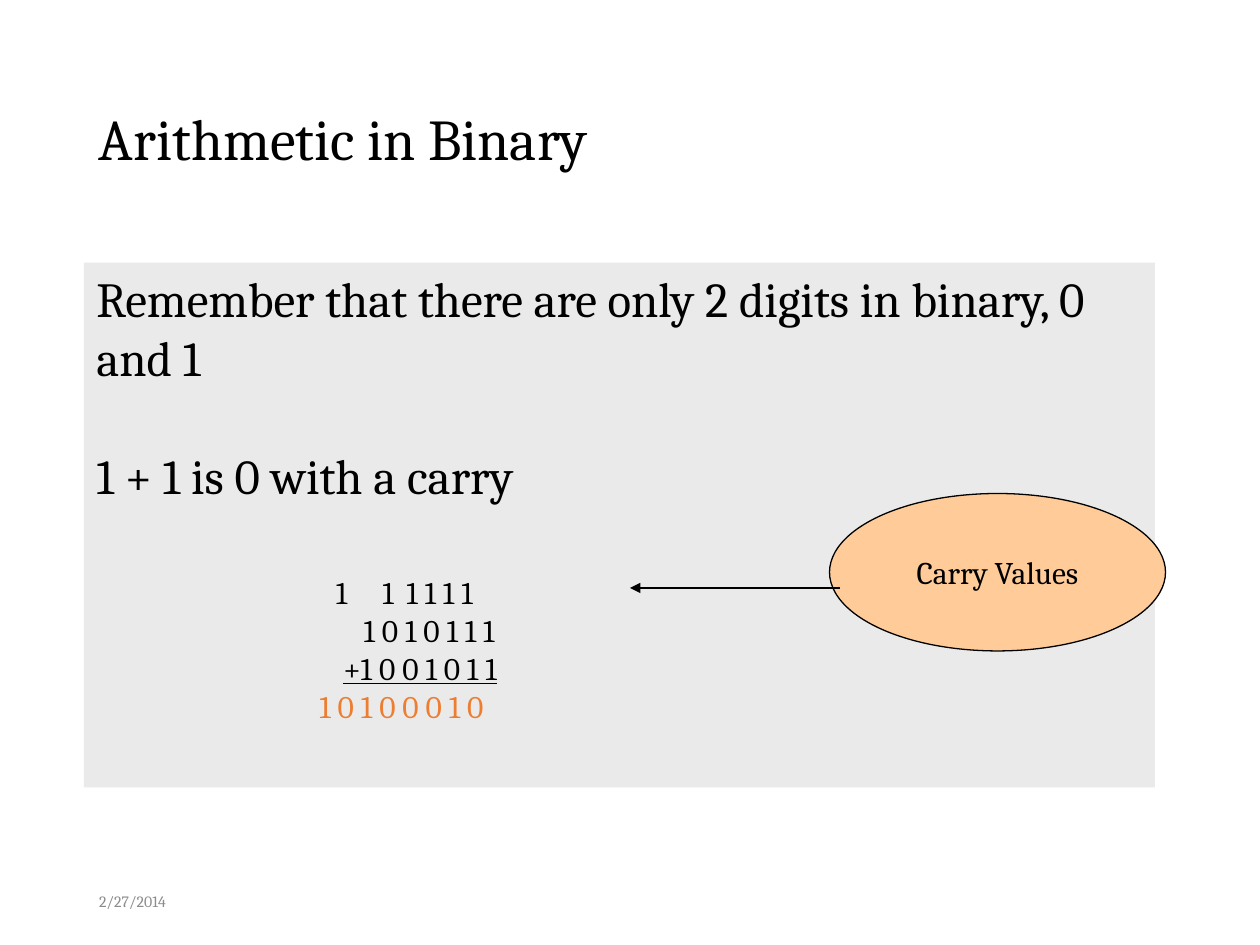
import dataclasses

import lxml.etree
import pptx
import pptx.dml.color
import pptx.enum.shapes
import pptx.enum.text
import pptx.oxml.ns
import pptx.util

ANCHOR = pptx.enum.text.MSO_ANCHOR
ALIGN = pptx.enum.text.PP_ALIGN
SHAPE = pptx.enum.shapes.MSO_SHAPE


@dataclasses.dataclass(frozen=True)
class Theme:
    font: str = "Cambria"
    ink: str = "000000"
    muted: str = "8C8C8C"
    panel: str = "EAEAEA"
    callout: str = "FFCC99"
    result: str = "ED7D31"
    title_size: int = 33
    body_size: int = 28
    small_size: int = 18
    date_size: int = 9
    line_width: float = 0.75


def color(value):
    return pptx.dml.color.RGBColor.from_string(value)


def add_xml(parent, tag, **attributes):
    element = lxml.etree.SubElement(parent, pptx.oxml.ns.qn(tag))
    for name, value in attributes.items():
        element.set(name, str(value))
    return element


class SlideBuilder:
    """Places elements on a grid of 120 columns by 90 rows."""

    COLUMNS, ROWS = 120, 90

    def __init__(self, presentation, theme):
        self.theme = theme
        self.cell_width = presentation.slide_width / self.COLUMNS
        self.cell_height = presentation.slide_height / self.ROWS
        self.slide = presentation.slides.add_slide(presentation.slide_layouts[6])

    def place(self, column, row):
        return round(column * self.cell_width), round(row * self.cell_height)

    def style_run(self, run, size, ink=None):
        run.font.name = self.theme.font
        run.font.size = pptx.util.Pt(size)
        run.font.color.rgb = color(ink or self.theme.ink)

    def set_text(self, shape, lines, size, ink=None, align=ALIGN.LEFT,
                 anchor=ANCHOR.TOP, wrap=True):
        frame = shape.text_frame
        frame.text = "\n".join(lines)
        frame.word_wrap = wrap
        frame.vertical_anchor = anchor
        for paragraph in frame.paragraphs:
            paragraph.alignment = align
            for run in paragraph.runs:
                self.style_run(run, size, ink)
        return frame

    def text(self, column, row, columns, rows, line, size, ink=None):
        box = self.slide.shapes.add_textbox(
            *self.place(column, row), *self.place(columns, rows))
        return self.set_text(box, [line], size, ink, anchor=ANCHOR.MIDDLE)

    def shape(self, kind, column, row, columns, rows, fill, outlined=False):
        shape = self.slide.shapes.add_shape(
            kind, *self.place(column, row), *self.place(columns, rows))
        shape.shadow.inherit = False
        shape.fill.solid()
        shape.fill.fore_color.rgb = color(fill)
        if outlined:
            shape.line.color.rgb = color(self.theme.ink)
            shape.line.width = pptx.util.Pt(self.theme.line_width)
        else:
            shape.line.fill.background()
        return shape

    def sum_row(self, paragraph, text, stops, ink=None, underline=False):
        """Adds one row of digits, set out by tab stops in inches."""
        paragraph.alignment = ALIGN.LEFT
        tab_list = add_xml(paragraph._p.get_or_add_pPr(), "a:tabLst")
        for stop in stops:
            add_xml(tab_list, "a:tab", pos=pptx.util.Inches(stop), algn="l")
        for part in ("\t", text):
            run = paragraph.add_run()
            run.text = part
            self.style_run(run, self.theme.small_size, ink)
        run.font.underline = underline

    def arrow(self, start, end):
        connector = self.slide.shapes.add_connector(
            pptx.enum.shapes.MSO_CONNECTOR.STRAIGHT,
            *self.place(*start), *self.place(*end))
        connector.line.color.rgb = color(self.theme.ink)
        connector.line.width = pptx.util.Pt(self.theme.line_width)
        add_xml(connector.line._get_or_add_ln(), "a:tailEnd", type="triangle")
        add_xml(connector._element.spPr, "a:effectLst")


def main():
    presentation = pptx.Presentation()
    presentation.slide_width = pptx.util.Inches(10)
    presentation.slide_height = pptx.util.Inches(7.5)
    theme = Theme()
    builder = SlideBuilder(presentation, theme)

    # Explanation panel
    panel = builder.shape(SHAPE.RECTANGLE, 8, 25, 102, 50, theme.panel)
    explanation = builder.set_text(panel, [
        "Remember that there are only 2 digits in binary, 0 and 1",
        "1 + 1 is 0 with a carry",
    ], theme.body_size)
    explanation.paragraphs[1].space_before = pptx.util.Pt(34)

    # Callout
    callout = builder.shape(SHAPE.OVAL, 79, 47, 32, 15, theme.callout, outlined=True)
    builder.set_text(callout, ["Carry Values"], theme.small_size,
                     align=ALIGN.CENTER, anchor=ANCHOR.MIDDLE, wrap=False)

    # Worked sum: carries, two numbers, result
    worked_sum = builder.shape(SHAPE.RECTANGLE, 17, 54, 58, 15.75, theme.panel)
    frame = worked_sum.text_frame
    frame.vertical_anchor = ANCHOR.TOP
    sum_rows = [
        dict(text="1\t1\t1 1 1 1", stops=(1.15, 1.52, 1.71)),
        dict(text="1 0 1 0 1 1 1", stops=(1.37,)),
        dict(text="+1 0 0 1 0 1 1", stops=(1.21,), underline=True),
        dict(text="1 0 1 0 0 0 1 0", stops=(1.02,), ink=theme.result),
    ]
    for index, sum_row in enumerate(sum_rows):
        paragraph = frame.add_paragraph() if index else frame.paragraphs[0]
        builder.sum_row(paragraph, **sum_row)

    # Arrow from the callout to the carries
    builder.arrow((80, 56), (60, 56))

    # Title and date
    title = builder.text(8.25, 4.8, 103.5, 17.4, "Arithmetic in Binary", theme.title_size)
    title.paragraphs[0].line_spacing = 0.9
    builder.text(8.25, 83.4, 27, 4.8, "2/27/2014", theme.date_size, theme.muted)

    presentation.save("out.pptx")


if __name__ == "__main__":
    main()
